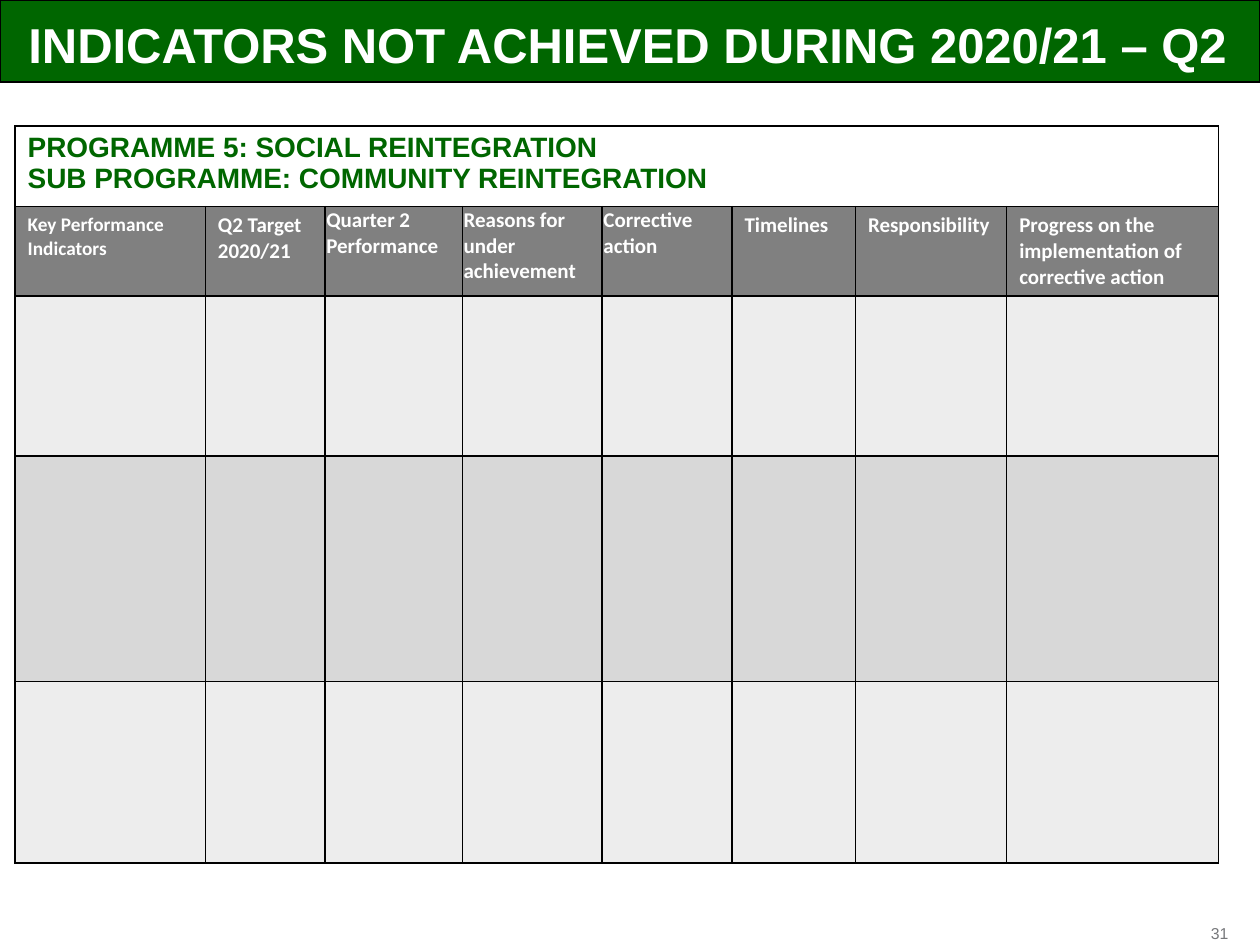
import pptx
import pptx.dml.color
import pptx.enum.shapes
import pptx.enum.text
import pptx.oxml
import pptx.oxml.ns
import pptx.util
from pptx.util import Inches

GREEN, BLACK, WHITE = "006600", "000000", "FFFFFF"
HEADER_GREY, LIGHT_GREY, MID_GREY, NUMBER_GREY = "808080", "EDEDED", "D8D8D8", "77787B"
COLUMN_WIDTHS = [1.51, 0.95, 1.09, 1.11, 1.03, 0.98, 1.2, 1.68]
ROW_HEIGHTS = [0.64, 0.7, 1.27, 1.79, 1.44]
BODY_FILLS = [LIGHT_GREY, MID_GREY, LIGHT_GREY]
WIDE_MARGINS = (0.1, 0.05, 0.1, 0.05)
TIGHT_MARGINS = (0.01, 0.01, 0.01, 0)
PROGRAMME = ["PROGRAMME 5: SOCIAL REINTEGRATION",
             "SUB PROGRAMME: COMMUNITY REINTEGRATION"]
HEADERS = [
    ("Key Performance Indicators", 11, WIDE_MARGINS),
    ("Q2 Target 2020/21", 12, WIDE_MARGINS),
    ("Quarter 2\vPerformance", 12, TIGHT_MARGINS),
    ("Reasons for under achievement", 12, TIGHT_MARGINS),
    ("Corrective action", 12, TIGHT_MARGINS),
    ("Timelines", 12, WIDE_MARGINS),
    ("Responsibility", 12, WIDE_MARGINS),
    ("Progress on the implementation of corrective action", 12, WIDE_MARGINS),
]


def rgb(value):
    return pptx.dml.color.RGBColor.from_string(value)


def write(frame, lines, font_name, size, color, bold=False, align=None):
    frame.text = "\n".join(lines)
    for paragraph in frame.paragraphs:
        paragraph.alignment = align
        paragraph.font.name = font_name
        paragraph.font.size = pptx.util.Pt(size)
        paragraph.font.bold = bold
        paragraph.font.color.rgb = rgb(color)


def fit_frame(frame):
    """Wrap the text, centre it vertically and drop the margins."""
    frame.auto_size = pptx.enum.text.MSO_AUTO_SIZE.NONE
    frame.word_wrap = True
    frame.vertical_anchor = pptx.enum.text.MSO_ANCHOR.MIDDLE
    frame.margin_left = frame.margin_top = frame.margin_right = frame.margin_bottom = 0


def add_title(slide):
    title = slide.shapes.title
    title.left, title.top = Inches(0), Inches(0.17)
    title.width, title.height = Inches(9.96), Inches(0.42)
    fit_frame(title.text_frame)
    write(title.text_frame, ["INDICATORS NOT ACHIEVED DURING 2020/21 – Q2"],
          "Arial", 28, WHITE, True, pptx.enum.text.PP_ALIGN.CENTER)
    title.text_frame.paragraphs[0].line_spacing = 0.9


def add_title_band(slide):
    band = slide.shapes.add_shape(pptx.enum.shapes.MSO_SHAPE.RECTANGLE,
                                  Inches(0), Inches(0), Inches(10), Inches(0.65))
    band.shadow.inherit = False
    band.fill.solid()
    band.fill.fore_color.rgb = rgb(GREEN)
    band.line.color.rgb = rgb(BLACK)
    band.line.width = pptx.util.Pt(1)
    slide.shapes.title._element.addprevious(band._element)


def add_page_number(slide):
    box = slide.shapes.add_textbox(Inches(9.46), Inches(7.33), Inches(0.29), Inches(0.15))
    fit_frame(box.text_frame)
    write(box.text_frame, ["31"], "Arial", 9, NUMBER_GREY,
          align=pptx.enum.text.PP_ALIGN.RIGHT)


def set_borders(cell):
    properties = cell._tc.get_or_add_tcPr()
    for side in ("lnL", "lnR", "lnT", "lnB"):
        properties.append(pptx.oxml.parse_xml(
            f'<a:{side} {pptx.oxml.ns.nsdecls("a")} w="{pptx.util.Pt(1)}">'
            f'<a:solidFill><a:srgbClr val="{BLACK}"/></a:solidFill></a:{side}>'))


def set_margins(cell, margins):
    (cell.margin_left, cell.margin_top,
     cell.margin_right, cell.margin_bottom) = map(Inches, margins)


def add_indicator_table(slide):
    table = slide.shapes.add_table(
        len(ROW_HEIGHTS), len(COLUMN_WIDTHS), Inches(0.12), Inches(1),
        Inches(sum(COLUMN_WIDTHS)), Inches(sum(ROW_HEIGHTS))).table
    table.first_row = table.horz_banding = False
    for column, width in zip(table.columns, COLUMN_WIDTHS):
        column.width = Inches(width)

    row_fills = [WHITE, HEADER_GREY, *BODY_FILLS]
    for row, height, fill in zip(table.rows, ROW_HEIGHTS, row_fills):
        row.height = Inches(height)
        for cell in row.cells:
            set_borders(cell)
            cell.fill.solid()
            cell.fill.fore_color.rgb = rgb(fill)

    programme_cell = table.cell(0, 0)
    programme_cell.merge(table.cell(0, len(COLUMN_WIDTHS) - 1))
    set_margins(programme_cell, WIDE_MARGINS)
    write(programme_cell.text_frame, PROGRAMME, "Arial", 16, GREEN, True)

    for cell, (text, size, margins) in zip(table.rows[1].cells, HEADERS):
        set_margins(cell, margins)
        write(cell.text_frame, [text], "Calibri", size, WHITE, True)


def main():
    deck = pptx.Presentation()
    deck.slide_width, deck.slide_height = Inches(10), Inches(7.5)
    slide = deck.slides.add_slide(deck.slide_layouts[5])
    add_title(slide)
    add_title_band(slide)
    add_page_number(slide)
    add_indicator_table(slide)
    deck.save("out.pptx")


if __name__ == "__main__":
    main()
